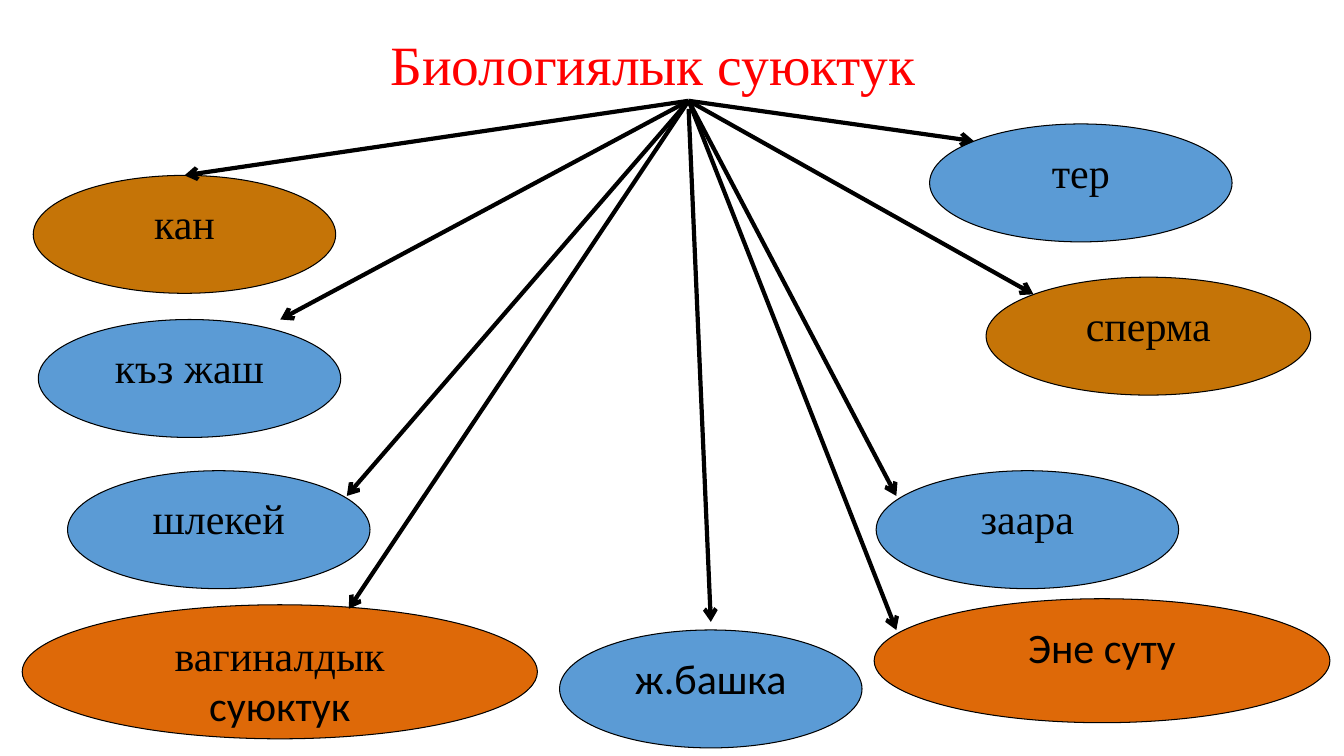
from dataclasses import dataclass

from lxml.etree import SubElement
from pptx import Presentation
from pptx.dml.color import RGBColor as Rgb
from pptx.enum.shapes import MSO_CONNECTOR as Connector, MSO_SHAPE as Shape
from pptx.enum.text import MSO_ANCHOR as Anchor, MSO_AUTO_SIZE as AutoSize, PP_ALIGN as Align
from pptx.oxml.ns import qn
from pptx.util import Pt

PX = 9144  # one hundredth of an inch, in EMU


@dataclass(frozen=True)
class Theme:
    black: Rgb = Rgb.from_string("000000")
    red: Rgb = Rgb.from_string("FF0000")
    blue: Rgb = Rgb.from_string("5B9BD5")
    brown: Rgb = Rgb.from_string("C57407")
    orange: Rgb = Rgb.from_string("DE6908")
    serif: str = "Times New Roman"
    sans: str = "Calibri"
    title_size: float = 39.6
    label_size: float = 30
    outline: float = 0.75
    arrow: float = 3


theme = Theme()


def style(span, font, size, color):
    span.font.name, span.font.size, span.font.color.rgb = font, Pt(size), color


def place(box, left, top, width, height):
    box.left, box.top, box.width, box.height = (v * PX for v in (left, top, width, height))


deck = Presentation()
deck.slide_width, deck.slide_height = 1333 * PX, 750 * PX
page = deck.slides.add_slide(deck.slide_layouts[5])

# Title, set slightly left of its box centre
title = page.shapes.title
place(title, 78, 33, 1167, 67)
frame = title.text_frame
frame.text = "Биологиялык суюктук"
frame.auto_size = AutoSize.NONE
frame.vertical_anchor = Anchor.MIDDLE
frame.margin_right = 38 * PX
para = frame.paragraphs[0]
para.alignment, para.line_spacing = Align.CENTER, 0.9
style(para.runs[0], theme.serif, theme.title_size, theme.red)

# Fluids: left, top, width, height, fill, spans of (text, font)
WIDE, TALL = 300, 117
fluids = [
    (33, 174, WIDE, TALL, theme.brown, [("кан", theme.serif)]),
    (867, 594, 452, 123, theme.orange, [("Эне суту", theme.sans)]),
    (978, 275, 322, TALL, theme.brown, [("сперма", theme.serif)]),
    (22, 600, 511, 133, theme.orange, [("вагиналдык ", theme.serif), ("суюктук", theme.sans)]),
    (922, 123, WIDE, TALL, theme.blue, [("тер", theme.serif)]),
    (38, 317, WIDE, TALL, theme.blue, [("къз жаш", theme.serif)]),
    (67, 467, WIDE, TALL, theme.blue, [("шлекей", theme.serif)]),
    (869, 467, WIDE, TALL, theme.blue, [("заара", theme.serif)]),
    (555, 625, WIDE, TALL, theme.blue, [("ж.башка", theme.sans)]),
]
for left, top, width, height, fill, spans in fluids:
    oval = page.shapes.add_shape(Shape.OVAL, 0, 0, 0, 0)
    place(oval, left, top, width, height)
    oval.shadow.inherit = False
    oval.fill.solid()
    oval.fill.fore_color.rgb = fill
    oval.line.color.rgb = theme.black
    oval.line.width = Pt(theme.outline)
    frame = oval.text_frame
    frame.word_wrap = True
    frame.vertical_anchor = Anchor.TOP
    para = frame.paragraphs[0]
    para.alignment = Align.CENTER
    for text, font in spans:
        span = para.add_run()
        span.text = text
        style(span, font, theme.label_size, theme.black)

# Arrows fanning out from under the title: start height, then tip
HUB_X, HUB_Y = 683, 100
arrows = [
    (HUB_Y, 183, 174), (HUB_Y, 278, 317), (HUB_Y, 344, 492),
    (HUB_Y, 346, 604), (108, 705, 617), (HUB_Y, 889, 625),
    (HUB_Y, 889, 492), (HUB_Y, 966, 140), (HUB_Y, 1025, 292),
]
for start_y, tip_x, tip_y in arrows:
    arrow = page.shapes.add_connector(
        Connector.STRAIGHT, HUB_X * PX, start_y * PX, tip_x * PX, tip_y * PX)
    arrow.line.color.rgb = theme.black
    arrow.line.width = Pt(theme.arrow)
    SubElement(arrow.line._get_or_add_ln(), qn("a:tailEnd"), type="arrow")
    SubElement(arrow._element.spPr, qn("a:effectLst"))

deck.save("out.pptx")
